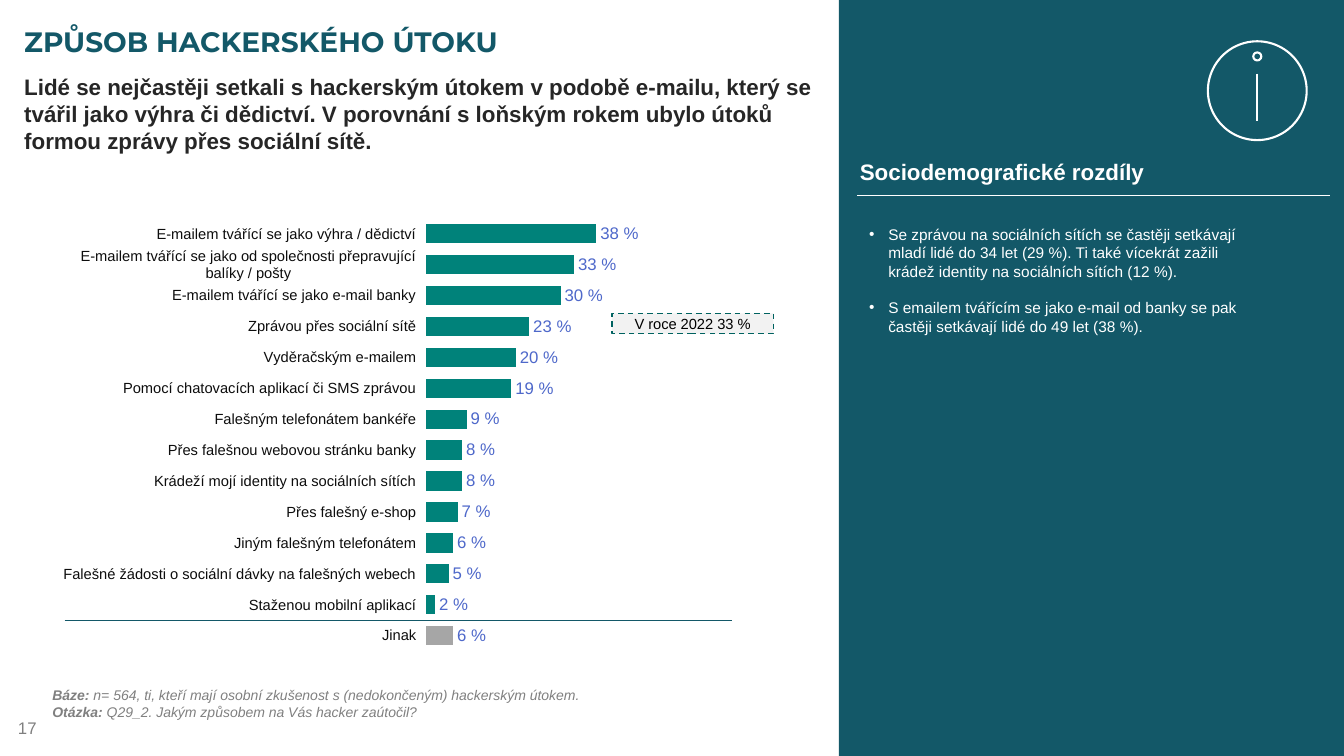
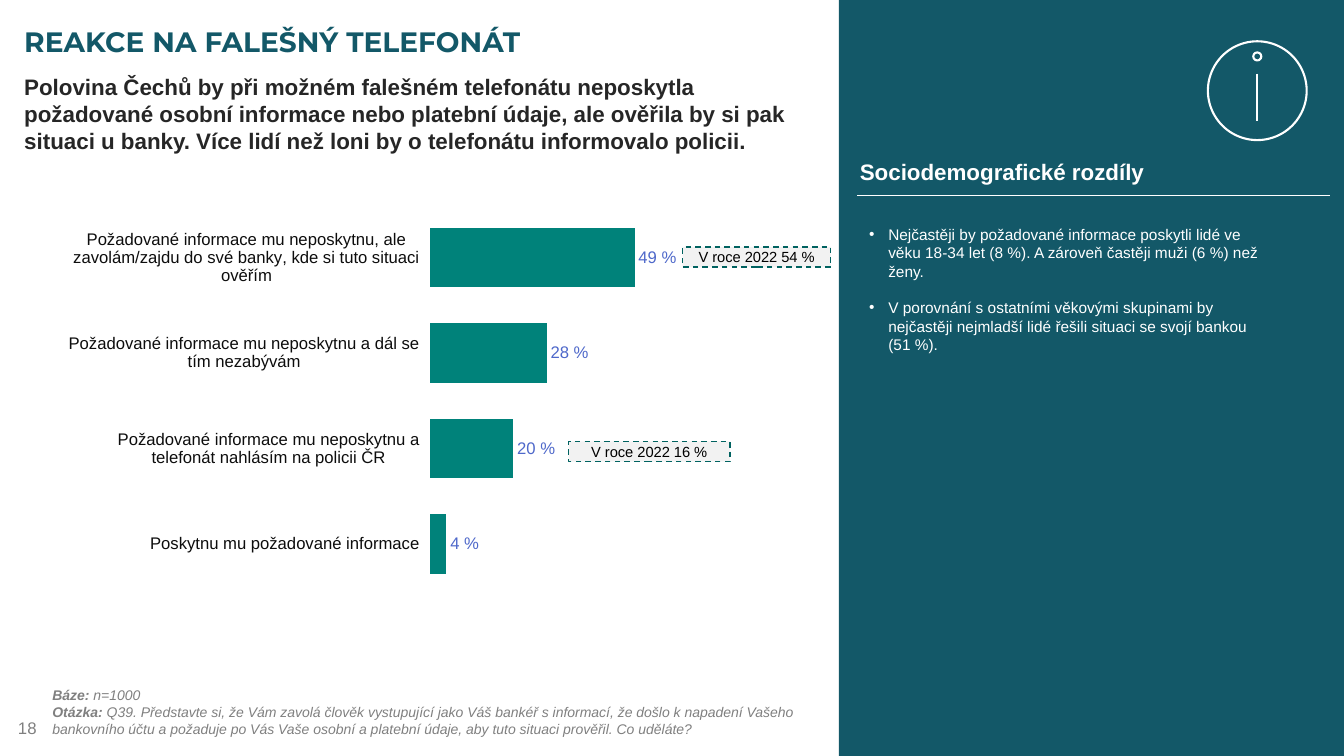
from dataclasses import dataclass
from lxml.etree import SubElement
from pptx import Presentation
from pptx.chart.data import CategoryChartData
from pptx.dml.color import RGBColor
from pptx.enum.chart import XL_CHART_TYPE, XL_LABEL_POSITION, XL_TICK_LABEL_POSITION, XL_TICK_MARK
from pptx.enum.dml import MSO_LINE
from pptx.enum.shapes import MSO_CONNECTOR, MSO_SHAPE
from pptx.enum.text import MSO_ANCHOR, MSO_AUTO_SIZE, PP_ALIGN
from pptx.oxml.ns import qn
from pptx.util import Inches, Pt


@dataclass(frozen=True)
class Theme:
    title_font: str = "Montserrat"
    body_font: str = "Arial"
    navy: str = "135868"
    bar: str = "00827A"
    other_bar: str = "A6A6A6"
    value_label: str = "4E68CA"
    category: str = "0D0D0D"
    headline: str = "262626"
    muted: str = "808080"
    callout_fill: str = "F2F2F2"
    callout_line: str = "006260"
    white: str = "FFFFFF"
    black: str = "000000"
    title_size: float = 20
    headline_size: float = 16
    label_size: float = 12
    list_size: float = 11
    callout_size: float = 10.5
    note_size: float = 10


THEME = Theme()


def set_font(font, size, color, name=THEME.body_font, bold=False, italic=False):
    font.name = name
    font.size = Pt(size)
    font.bold = bold
    font.italic = italic
    font.color.rgb = RGBColor.from_string(color)


def write_text(para, text, align=PP_ALIGN.LEFT, space_before=0, **style):
    para.alignment = align
    para.space_before = Pt(space_before)
    span = para.add_run()
    span.text = text
    set_font(span.font, **style)


def set_bullet(para, character=None, indent=0):
    properties = para._p.get_or_add_pPr()
    properties.set("marL", str(Inches(indent)))
    properties.set("indent", str(Inches(-indent)))
    if character:
        SubElement(properties, qn("a:buFont"), typeface="Arial")
        SubElement(properties, qn("a:buChar"), char=character)
    else:
        SubElement(properties, qn("a:buNone"))


def place(shape, left, top, width, height):
    shape.left, shape.top = Inches(left), Inches(top)
    shape.width, shape.height = Inches(width), Inches(height)


def set_frame(shape, anchor=MSO_ANCHOR.TOP, margins=(0.1, 0.05)):
    frame = shape.text_frame
    frame.word_wrap = True
    frame.auto_size = MSO_AUTO_SIZE.NONE
    frame.vertical_anchor = anchor
    frame.margin_left = frame.margin_right = Inches(margins[0])
    frame.margin_top = frame.margin_bottom = Inches(margins[1])
    return frame


class SurveyDeck:
    def __init__(self, theme):
        self.theme = theme
        self.deck = Presentation()
        self.deck.slide_width = Inches(13.33)
        self.deck.slide_height = Inches(7.5)
        self.page = None

    def start_page(self, number, title, headline, findings, base, question):
        theme = self.theme
        self.page = self.deck.slides.add_slide(self.deck.slide_layouts[3])
        self.add_title(title)
        self.add_headline(headline)
        self.send_back(self.add_shape(MSO_SHAPE.RECTANGLE, 8.32, 0, 5.01, 7.5, fill=theme.navy))
        self.add_text(8.43, 1.52, 4, 0.37, "Sociodemografické rozdíly",
                      size=theme.headline_size, color=theme.white, bold=True)
        self.add_line(8.5, 1.94, 13.19, 1.94, theme.white, 0.5)
        self.add_findings(findings)
        self.add_info_icon()
        self.add_footnote((("Báze: ", base), ("Otázka: ", question)))
        self.add_text(0.08, 7.02, 1, 0.4, number, anchor=MSO_ANCHOR.MIDDLE,
                      size=theme.label_size, color=theme.muted)

    def send_back(self, shape):
        self.page.shapes.title.element.addprevious(shape._element)

    def add_title(self, text):
        title = self.page.shapes.title
        place(title, 0.14, 0.14, 13.05, 0.53)
        frame = set_frame(title, MSO_ANCHOR.MIDDLE)
        write_text(frame.paragraphs[0], text, name=self.theme.title_font,
                   size=self.theme.title_size, color=self.theme.navy, bold=True)

    def add_headline(self, text):
        box = self.page.placeholders[1]
        place(box, 0.14, 0.68, 8.18, 0.95)
        para = set_frame(box).paragraphs[0]
        set_bullet(para)
        write_text(para, text, size=self.theme.headline_size, color=self.theme.headline, bold=True)

    def add_findings(self, findings):
        box = self.page.placeholders[2]
        place(box, 8.52, 2.18, 4.17, 1.77)
        frame = set_frame(box)
        for index, finding in enumerate(findings):
            para = frame.add_paragraph() if index else frame.paragraphs[0]
            set_bullet(para, "•", 0.19)
            write_text(para, finding, space_before=13 if index else 0,
                       size=self.theme.list_size, color=self.theme.white)

    def add_text(self, left, top, width, height, text, anchor=MSO_ANCHOR.TOP, **style):
        box = self.page.shapes.add_textbox(0, 0, 0, 0)
        place(box, left, top, width, height)
        write_text(set_frame(box, anchor).paragraphs[0], text, **style)

    def add_footnote(self, entries):
        box = self.page.shapes.add_textbox(0, 0, 0, 0)
        place(box, 0.52, 6.81, 7.8, 0.5)
        frame = set_frame(box, margins=(0, 0))
        style = dict(size=self.theme.note_size, color=self.theme.muted, italic=True)
        for index, (label, text) in enumerate(entries):
            para = frame.add_paragraph() if index else frame.paragraphs[0]
            write_text(para, label, bold=True, **style)
            write_text(para, text, **style)

    def add_shape(self, kind, left, top, width, height, fill=None, line=None, weight=1, shapes=None):
        shape = (shapes or self.page.shapes).add_shape(kind, 0, 0, 0, 0)
        place(shape, left, top, width, height)
        shape.shadow.inherit = False
        if fill:
            shape.fill.solid()
            shape.fill.fore_color.rgb = RGBColor.from_string(fill)
        else:
            shape.fill.background()
        if line:
            shape.line.color.rgb = RGBColor.from_string(line)
            shape.line.width = Pt(weight)
        else:
            shape.line.fill.background()
        return shape

    def add_line(self, left, top, right, bottom, color, weight, shapes=None):
        line = (shapes or self.page.shapes).add_connector(
            MSO_CONNECTOR.STRAIGHT, Inches(left), Inches(top), Inches(right), Inches(bottom))
        line.line.color.rgb = RGBColor.from_string(color)
        line.line.width = Pt(weight)
        SubElement(line._element.spPr, qn("a:effectLst"))

    def add_info_icon(self):
        shapes = self.page.shapes.add_group_shape().shapes
        white = self.theme.white
        for circle in ((11.98, 0.41, 0.98, 0.98), (12.43, 0.52, 0.08, 0.08)):
            self.add_shape(MSO_SHAPE.OVAL, *circle, line=white, weight=1.5, shapes=shapes)
        self.add_line(12.47, 0.73, 12.47, 1.2, white, 1.5, shapes)

    def add_callout(self, left, top, width, text):
        theme = self.theme
        box = self.add_shape(MSO_SHAPE.RECTANGLE, left, top, width, 0.2,
                             fill=theme.callout_fill, line=theme.callout_line)
        box.line.dash_style = MSO_LINE.DASH
        write_text(set_frame(box, MSO_ANCHOR.MIDDLE).paragraphs[0], text, align=PP_ALIGN.CENTER,
                   size=theme.callout_size, color=theme.black)

    def add_bar_chart(self, left, top, width, height, answers, category_size, plot, other=None):
        theme = self.theme
        data = CategoryChartData()
        data.categories = list(answers)
        data.add_series("Series 1", list(answers.values()))
        frame = self.page.shapes.add_chart(
            XL_CHART_TYPE.BAR_CLUSTERED, Inches(left), Inches(top), Inches(width), Inches(height), data)
        self.send_back(frame)
        chart = frame.chart
        chart.has_legend = chart.has_title = False
        set_font(chart.font, theme.note_size, theme.value_label)

        categories = chart.category_axis
        categories.reverse_order = True
        categories.major_tick_mark = categories.minor_tick_mark = XL_TICK_MARK.NONE
        categories.tick_label_position = XL_TICK_LABEL_POSITION.LOW
        categories.format.line.fill.background()
        set_font(categories.tick_labels.font, category_size, theme.category)
        values = chart.value_axis
        values.minimum_scale, values.maximum_scale = 0, 100
        values.has_major_gridlines = False
        values.visible = False

        bars = chart.plots[0]
        bars.gap_width = 60
        bars.vary_by_categories = False
        series = bars.series[0]
        series.format.fill.solid()
        series.format.fill.fore_color.rgb = RGBColor.from_string(theme.bar)
        if other is not None:
            fill = series.points[other].format.fill
            fill.solid()
            fill.fore_color.rgb = RGBColor.from_string(theme.other_bar)
        labels = series.data_labels
        labels.show_value = True
        labels.position = XL_LABEL_POSITION.OUTSIDE_END
        labels.number_format = '#,##0\\ "%";\\-#,##0"%"'
        labels.number_format_is_linked = False
        set_font(labels.font, theme.label_size, theme.value_label)
        self.set_plot_area(chart, plot)

    def set_plot_area(self, chart, plot):
        area = chart._chartSpace.chart.plotArea
        for layout in area.findall(qn("c:layout")):
            area.remove(layout)
        layout = SubElement(area, qn("c:layout"))
        area.insert(0, layout)
        manual = SubElement(layout, qn("c:manualLayout"))
        settings = [("layoutTarget", "inner"), ("xMode", "edge"), ("yMode", "edge")]
        for tag, value in settings + list(zip("xywh", plot)):
            SubElement(manual, qn(f"c:{tag}"), val=str(value))


def main():
    survey = SurveyDeck(THEME)

    survey.start_page(
        "17", "ZPŮSOB HACKERSKÉHO ÚTOKU",
        "Lidé se nejčastěji setkali s hackerským útokem v podobě e-mailu, který se tvářil jako výhra či "
        "dědictví. V porovnání s loňským rokem ubylo útoků formou zprávy přes sociální sítě.",
        ("Se zprávou na sociálních sítích se častěji setkávají mladí lidé do 34 let (29 %). "
         "Ti také vícekrát zažili krádež identity na sociálních sítích (12 %).",
         "S emailem tvářícím se jako e-mail od banky se pak častěji setkávají lidé do 49 let (38 %)."),
        "n= 564, ti, kteří mají osobní zkušenost s (nedokončeným) hackerským útokem.",
        "Q29_2. Jakým způsobem na Vás hacker zaútočil?")
    attacks = {
        "E-mailem tvářící se jako výhra / dědictví": 38,
        "E-mailem tvářící se jako od společnosti přepravující balíky / pošty": 33,
        "E-mailem tvářící se jako e-mail banky": 30,
        "Zprávou přes sociální sítě": 23,
        "Vyděračským e-mailem": 20,
        "Pomocí chatovacích aplikací či SMS zprávou": 19,
        "Falešným telefonátem bankéře": 9,
        "Přes falešnou webovou stránku banky": 8,
        "Krádeží mojí identity na sociálních sítích": 8,
        "Přes falešný e-shop": 7,
        "Jiným falešným telefonátem": 6,
        "Falešné žádosti o sociální dávky na falešných webech": 5,
        "Staženou mobilní aplikací": 2,
        "Jinak": 6,
    }
    survey.add_bar_chart(0.49, 1.73, 8.18, 4.74, attacks, 10.5, (0.457, 0.092, 0.543, 0.906),
                         other=len(attacks) - 1)
    survey.add_line(0.64, 6.15, 7.26, 6.15, THEME.navy, 0.5)
    survey.add_callout(6.07, 3.11, 1.6, "V roce 2022 33 %")

    survey.start_page(
        "18", "REAKCE NA FALEŠNÝ TELEFONÁT",
        "Polovina Čechů by při možném falešném telefonátu neposkytla požadované osobní informace nebo "
        "platební údaje, ale ověřila by si pak situaci u banky. Více lidí než loni by o telefonátu "
        "informovalo policii.",
        ("Nejčastěji by požadované informace poskytli lidé ve věku 18-34 let (8 %). "
         "A zároveň častěji muži (6 %) než ženy.",
         "V porovnání s ostatními věkovými skupinami by nejčastěji nejmladší lidé řešili situaci "
         "se svojí bankou (51 %)."),
        "n=1000",
        "Q39. Představte si, že Vám zavolá člověk vystupující jako Váš bankéř s informací, že došlo k "
        "napadení Vašeho bankovního účtu a požaduje po Vás Vaše osobní a platební údaje, aby tuto "
        "situaci prověřil. Co uděláte?")
    reactions = {
        "Požadované informace mu neposkytnu, ale zavolám/zajdu do své banky, kde si tuto situaci ověřím": 49,
        "Požadované informace mu neposkytnu a dál se tím nezabývám": 28,
        "Požadované informace mu neposkytnu a telefonát nahlásím na policii ČR": 20,
        "Poskytnu mu požadované informace": 4,
    }
    survey.add_bar_chart(0.68, 1.7, 7.73, 4.17, reactions, 12, (0.459, 0.092, 0.541, 0.908))
    survey.add_callout(5.64, 4.38, 1.6, "V roce 2022 16 %")
    survey.add_callout(6.77, 2.45, 1.47, "V roce 2022 54 %")

    survey.deck.save("out.pptx")


if __name__ == "__main__":
    main()
